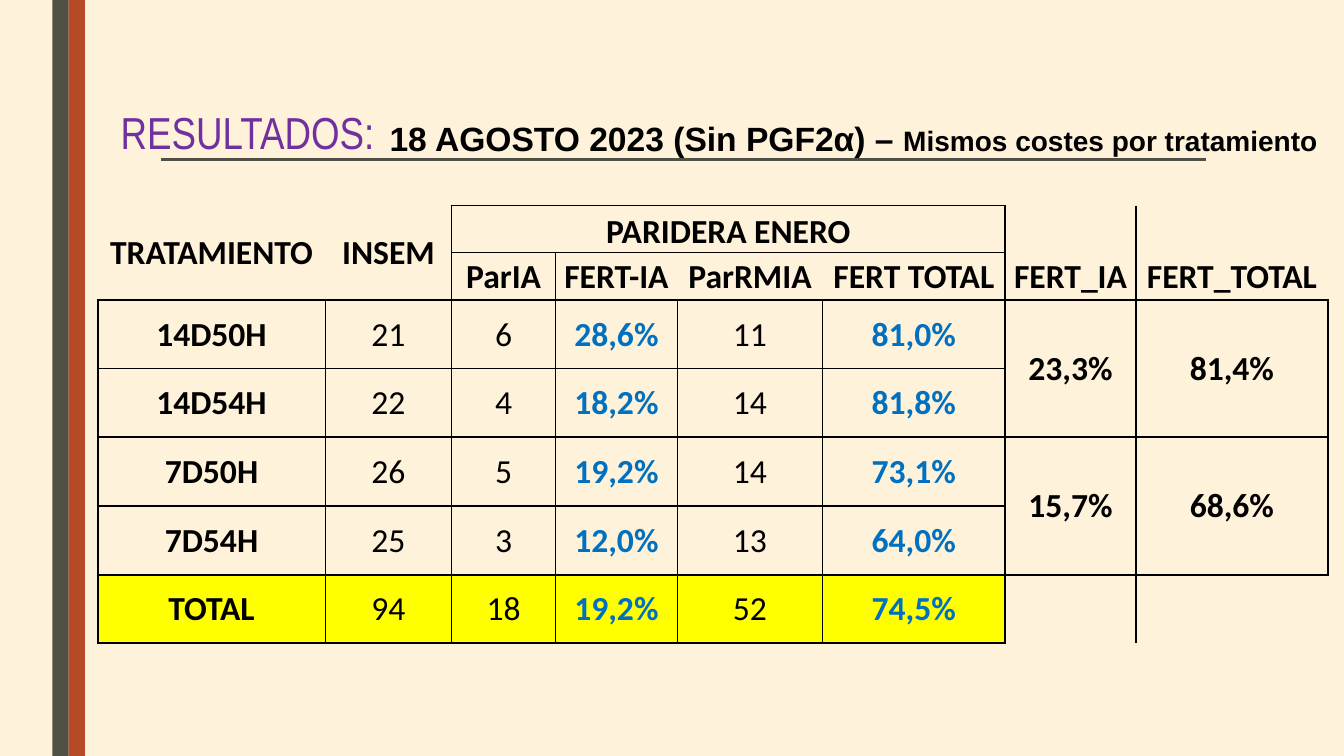
from lxml.etree import SubElement
from pptx import Presentation
from pptx.dml.color import RGBColor
from pptx.enum.shapes import MSO_CONNECTOR as Connector, MSO_SHAPE as Shape
from pptx.enum.text import MSO_ANCHOR as Anchor, PP_ALIGN as Align
from pptx.oxml.ns import qn
from pptx.util import Cm, Pt

COLORS = {
    "background": "FFF2DA", "rust": "B64926", "olive": "505046",
    "purple": "7030A0", "black": "000000", "blue": "0070C0", "yellow": "FFFF00",
}
PLAIN_TABLE_STYLE = "{2D5ABB26-0587-4C30-8999-92F81FD0307C}"
COLUMNS = [5.74, 3.18, 2.62, 3.07, 3.66, 4.6, 3.3, 4.83]
ROWS = [1.19] * 2 + [1.73] * 5
VALUES = [
    ["TRATAMIENTO", "INSEM", "PARIDERA ENERO", "", "", "", "", ""],
    ["", "", "ParIA", "FERT-IA", "ParRMIA", "FERT TOTAL", "FERT_IA", "FERT_TOTAL"],
    ["14D50H", "21", "6", "28,6%", "11", "81,0%", "23,3%", "81,4%"],
    ["14D54H", "22", "4", "18,2%", "14", "81,8%", "", ""],
    ["7D50H", "26", "5", "19,2%", "14", "73,1%", "15,7%", "68,6%"],
    ["7D54H", "25", "3", "12,0%", "13", "64,0%", "", ""],
    ["TOTAL", "94", "18", "19,2%", "52", "74,5%", "", ""],
]
# Areas are (top row, left column, bottom row, right column)
MERGES = [(0, 0, 1, 0), (0, 1, 1, 1), (0, 2, 0, 5),
          (2, 6, 3, 6), (2, 7, 3, 7), (4, 6, 5, 6), (4, 7, 5, 7)]
TREATMENT_BLOCKS = [(2, 0, 3, 5), (4, 0, 5, 5), (6, 0, 6, 5)]
HEADER_BLOCK = (0, 2, 1, 5)
TOTAL_ROW, FIRST_DATA_ROW = 6, 2
COUNT_COLUMNS, RATE_COLUMNS = (1, 2, 4), (3, 5)
THICK, MEDIUM, THIN = 1.5, 1, 0.5


def color(name):
    return RGBColor.from_string(COLORS[name])


def style_font(font, size, face, shade, bold=False):
    font.size, font.name, font.bold = Pt(size), face, bold
    font.color.rgb = color(shade)


def add_side_bars(page, left, top, width, height):
    for index, shade in enumerate(("olive", "rust")):
        bar = page.shapes.add_shape(Shape.RECTANGLE, Cm(left + index * width / 2),
                                    Cm(top), Cm(width / 2), Cm(height))
        bar.shadow.inherit = False
        bar.fill.solid()
        bar.fill.fore_color.rgb = color(shade)
        bar.line.fill.background()


def add_text(page, left, top, width, height, spans, face, shade, bold, align):
    box = page.shapes.add_textbox(Cm(left), Cm(top), Cm(width), Cm(height))
    box.text_frame.word_wrap = False
    para = box.text_frame.paragraphs[0]
    para.alignment = align
    for text, size in spans:
        span = para.add_run()
        span.text = text
        style_font(span.font, size, face, shade, bold)


def add_heading(page, left, top):
    # Rule under the heading
    rule = page.shapes.add_connector(Connector.STRAIGHT, Cm(left + 1.27), Cm(top + 1.5),
                                     Cm(left + 27.59), Cm(top + 1.5))
    rule.line.color.rgb = color("olive")
    rule.line.width = Pt(2.25)
    SubElement(rule._element.spPr, qn("a:effectLst"))
    # Date and section title
    add_text(page, left + 6.76, top + 0.33, 23.93, 1.27,
             [("18 AGOSTO 2023 (Sin PGF2α) – ", 24), ("Mismos costes por tratamiento", 20)],
             "Arial", "black", True, Align.CENTER)
    add_text(page, left, top, 12.04, 1.63, [("RESULTADOS:", 32)],
             "Arial Narrow", "purple", False, Align.LEFT)


def find_borders():
    """Return widths of the horizontal and vertical grid lines by (row, column)."""
    across, down = {}, {}

    # Lines inside the treatment rows
    for top, left, bottom, right in TREATMENT_BLOCKS:
        for row in range(top, bottom + 1):
            for column in range(left, right + 1):
                across[row, column] = down[row, column] = MEDIUM
    # Outlines of all blocks
    for top, left, bottom, right in TREATMENT_BLOCKS + [HEADER_BLOCK] + MERGES[3:]:
        for column in range(left, right + 1):
            across[top, column] = across[bottom + 1, column] = THICK
        for row in range(top, bottom + 1):
            down[row, left] = down[row, right + 1] = THICK
    # Lighter lines under the group header and beside the summary
    across.update({(1, column): THIN for column in range(2, 6)})
    down.update({(row, 6): MEDIUM for row in range(FIRST_DATA_ROW, TOTAL_ROW)})
    return across, down


def draw_border(cell, side, width):
    line = SubElement(cell._tc.get_or_add_tcPr(), qn(f"a:ln{side}"), w=str(Pt(width)))
    fill = SubElement(line, qn("a:solidFill"))
    SubElement(fill, qn("a:srgbClr"), val=COLORS["black"])


def fill_cell(cell, row, column, text):
    cell.margin_left = cell.margin_right = cell.margin_top = Cm(0.02)
    cell.margin_bottom = 0
    group_header = (row, column) == HEADER_BLOCK[:2]
    cell.vertical_anchor = Anchor.BOTTOM if group_header else Anchor.MIDDLE
    if row == TOTAL_ROW and column <= 5:
        cell.fill.solid()
        cell.fill.fore_color.rgb = color("yellow")
    else:
        cell.fill.background()
    if text:
        data = row >= FIRST_DATA_ROW
        cell.text = text
        para = cell.text_frame.paragraphs[0]
        para.alignment = Align.CENTER
        style_font(para.font, 24, "Calibri",
                   "blue" if data and column in RATE_COLUMNS else "black",
                   not (data and column in COUNT_COLUMNS))


def add_results_table(page, left, top):
    frame = page.shapes.add_table(len(ROWS), len(COLUMNS), Cm(left), Cm(top),
                                  Cm(sum(COLUMNS)), Cm(sum(ROWS)))
    table = frame.table
    table.first_row = table.horz_banding = False
    table._tbl.tblPr.find(qn("a:tableStyleId")).text = PLAIN_TABLE_STYLE
    for column, width in zip(table.columns, COLUMNS):
        column.width = Cm(width)
    for row, height in zip(table.rows, ROWS):
        row.height = Cm(height)

    ends = {}
    for first_row, first_column, last_row, last_column in MERGES:
        table.cell(first_row, first_column).merge(table.cell(last_row, last_column))
        ends[first_row, first_column] = last_row, last_column

    across, down = find_borders()
    for row, texts in enumerate(VALUES):
        for column, text in enumerate(texts):
            cell = table.cell(row, column)
            last_row, last_column = ends.get((row, column), (row, column))
            edges = {"L": down.get((row, column)), "R": down.get((row, last_column + 1)),
                     "T": across.get((row, column)), "B": across.get((last_row + 1, column))}
            for side, width in edges.items():
                if width:
                    draw_border(cell, side, width)
            fill_cell(cell, row, column, text)


def main():
    deck = Presentation()
    deck.slide_width, deck.slide_height = Cm(33.87), Cm(19.05)
    page = deck.slides.add_slide(deck.slide_layouts[6])
    page.background.fill.solid()
    page.background.fill.fore_color.rgb = color("background")
    add_side_bars(page, 1.32, 0, 0.82, 19.05)
    add_heading(page, 2.79, 2.51)
    add_results_table(page, 2.46, 5.18)
    deck.save("out.pptx")


if __name__ == "__main__":
    main()
